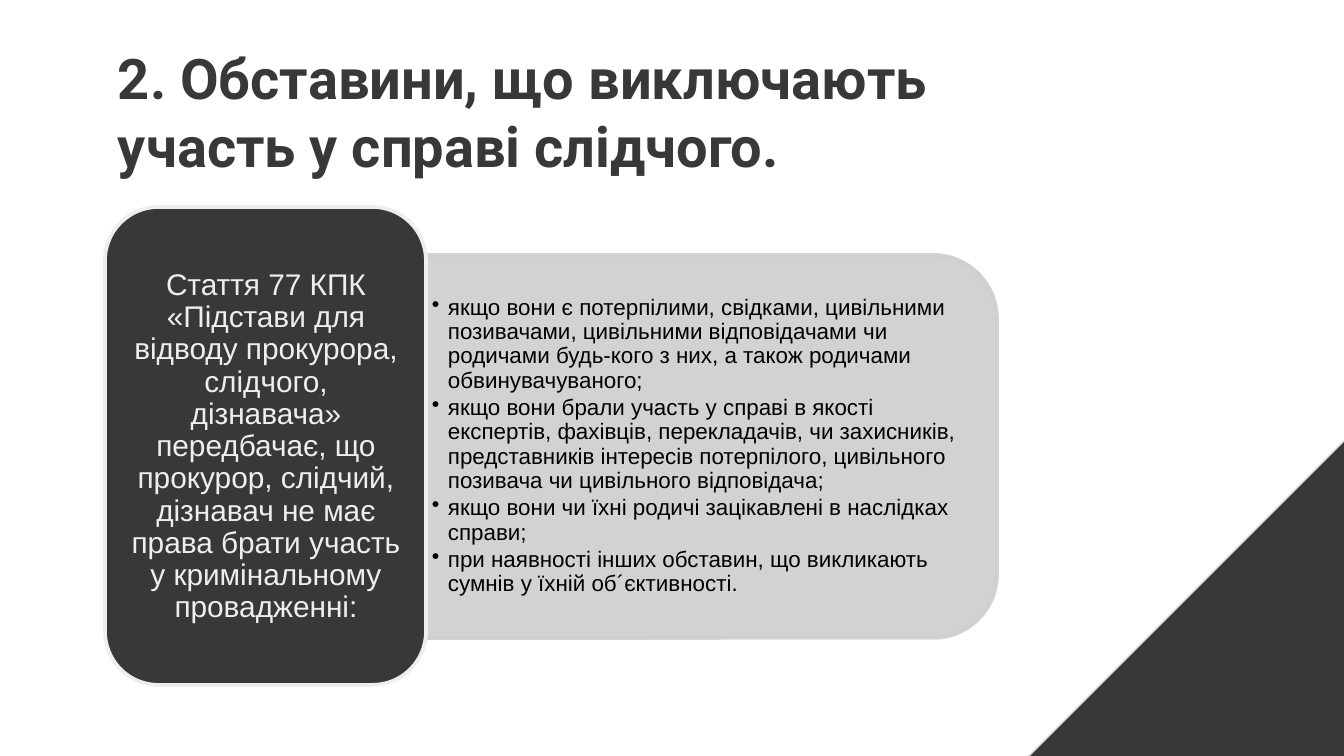
"""Build the slide on circumstances that exclude an investigator from a case."""
from lxml.etree import SubElement
from pptx import Presentation
from pptx.dml.color import RGBColor
from pptx.enum.shapes import MSO_SHAPE
from pptx.enum.text import MSO_ANCHOR, PP_ALIGN
from pptx.oxml.ns import qn
from pptx.util import Pt

TITLE = "2. Обставини, що виключають участь у справі слідчого."
ARTICLE = (
    "Стаття 77 КПК «Підстави для відводу прокурора, слідчого, дізнавача» "
    "передбачає, що прокурор, слідчий, дізнавач не має права брати участь "
    "у кримінальному провадженні:"
)
GROUNDS = [
    "якщо вони є потерпілими, свідками, цивільними позивачами, цивільними "
    "відповідачами чи родичами будь-кого з них, а також родичами обвинувачуваного;",
    "якщо вони брали участь у справі в якості експертів, фахівців, перекладачів, "
    "чи захисників, представників інтересів потерпілого, цивільного позивача "
    "чи цивільного відповідача;",
    "якщо вони чи їхні родичі зацікавлені в наслідках справи;",
    "при наявності інших обставин, що викликають сумнів у їхній об´єктивності.",
]
COLORS = {
    "dark": "383838",
    "light": "EEEEEE",
    "panel": "CECECE",
    "edge": "DBDBDB",
    "black": "000000",
}
EMU_PER_PX = 914400 / 134.4
BULLET_INDENT = 16


def px(length):
    return round(length * EMU_PER_PX)


def rgb(name):
    return RGBColor.from_string(COLORS[name])


def add_block(slide, preset, box, fill, line, line_width, opacity=100):
    block = slide.shapes.add_shape(preset, *map(px, box))
    block.shadow.inherit = False
    block.fill.solid()
    block.fill.fore_color.rgb = rgb(fill)
    block.line.color.rgb = rgb(line)
    block.line.width = Pt(line_width)
    if opacity < 100:
        for color in block._element.spPr.iter(qn("a:srgbClr")):
            SubElement(color, qn("a:alpha"), val=str(opacity * 1000))
    return block


def add_text(slide, box, texts, font, size, color, insets, anchor=MSO_ANCHOR.MIDDLE,
             align=PP_ALIGN.LEFT, bold=False, spacing=None, after=0, bullets=False):
    frame = slide.shapes.add_textbox(*map(px, box)).text_frame
    frame.word_wrap = True
    frame.vertical_anchor = anchor
    frame.margin_left = frame.margin_right = px(insets[0])
    frame.margin_top = frame.margin_bottom = px(insets[1])
    for index, text in enumerate(texts):
        paragraph = frame.add_paragraph() if index else frame.paragraphs[0]
        paragraph.alignment = align
        paragraph.line_spacing = spacing
        paragraph.space_after = Pt(after)
        if bullets:
            add_bullet(paragraph, color)
        run = paragraph.add_run()
        run.text = text
        run.font.name = font
        run.font.size = Pt(size)
        run.font.bold = bold
        run.font.color.rgb = rgb(color)


def add_bullet(paragraph, color):
    properties = paragraph._p.get_or_add_pPr()
    properties.set("marL", str(px(BULLET_INDENT)))
    properties.set("indent", str(-px(BULLET_INDENT)))
    bullet_color = SubElement(properties, qn("a:buClr"))
    SubElement(bullet_color, qn("a:srgbClr"), val=COLORS[color])
    SubElement(properties, qn("a:buChar"), char="•")


def main():
    deck = Presentation()
    deck.slide_width, deck.slide_height = px(1344), px(756)
    slide = deck.slides.add_slide(deck.slide_layouts[6])

    corner = add_block(slide, MSO_SHAPE.RIGHT_TRIANGLE, (853, 226, 706, 706),
                       "dark", "edge", 0.75)
    corner._element.spPr.get_or_add_xfrm().set("flipH", "1")

    panel = add_block(slide, MSO_SHAPE.ROUND_2_SAME_RECTANGLE, (520, 161, 383, 571),
                      "panel", "panel", 2, opacity=90)
    panel.rotation = 90
    add_text(slide, (426, 274, 552, 345), GROUNDS, "Arial", 12, "black", (6, 4),
             spacing=0.9, after=1.8, bullets=True)

    add_block(slide, MSO_SHAPE.ROUNDED_RECTANGLE, (105, 207, 321, 478),
              "dark", "light", 2)
    add_text(slide, (121, 223, 290, 448), [ARTICLE], "Arial", 16, "light", (9, 4),
             align=PP_ALIGN.CENTER, spacing=0.9, after=5.6)

    add_text(slide, (105, 31, 848, 78), [TITLE], "Roboto", 30, "dark", (13, 13),
             anchor=MSO_ANCHOR.TOP, bold=True)
    deck.save("out.pptx")


if __name__ == "__main__":
    main()
